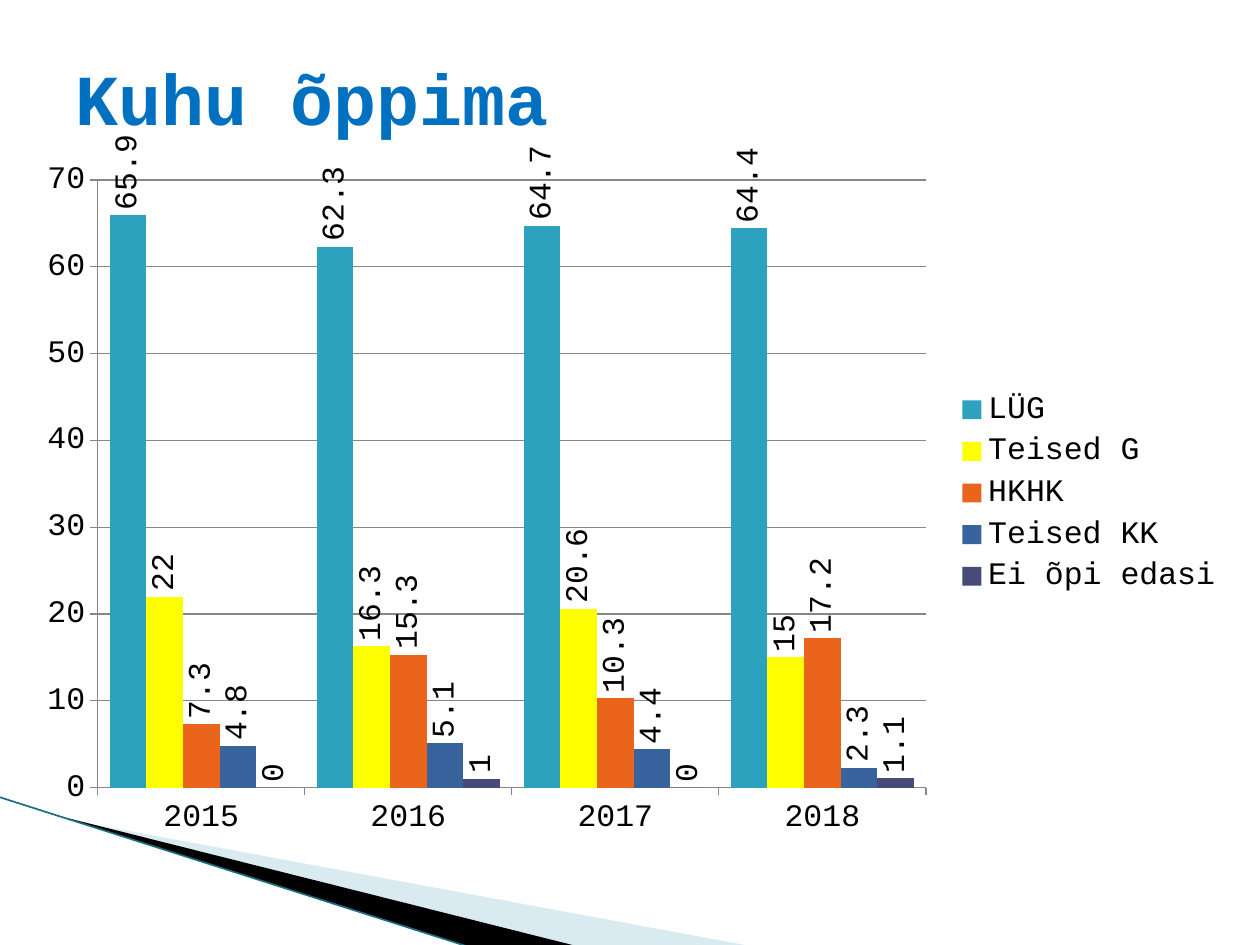
from lxml import etree
from pptx import Presentation
from pptx.chart.data import CategoryChartData
from pptx.dml.color import RGBColor
from pptx.enum.chart import XL_CHART_TYPE as ChartType, XL_LABEL_POSITION as LabelPosition
from pptx.enum.chart import XL_LEGEND_POSITION as LegendPosition, XL_TICK_MARK as TickMark
from pptx.enum.shapes import MSO_CONNECTOR as Connector
from pptx.enum.text import MSO_ANCHOR as Anchor
from pptx.oxml import parse_xml
from pptx.oxml.ns import nsdecls, qn
from pptx.util import Pt

PX = 914400 // 126
FONT = "Courier New"
BLACK = RGBColor(0x00, 0x00, 0x00)
TITLE_BLUE = RGBColor(0x00, 0x70, 0xC0)
PALE_BLUE = RGBColor(0xA0, 0xCB, 0xDC)
TEAL = RGBColor(0x16, 0x70, 0x80)
GRAY = RGBColor(0x87, 0x87, 0x87)

YEARS = ["2015", "2016", "2017", "2018"]
SERIES = [
    ("LÜG", (65.9, 62.3, 64.7, 64.4), RGBColor(0x2D, 0xA2, 0xBF)),
    ("Teised G", (22, 16.3, 20.6, 15), RGBColor(0xFF, 0xFF, 0x00)),
    ("HKHK", (7.3, 15.3, 10.3, 17.2), RGBColor(0xEB, 0x64, 0x1B)),
    ("Teised KK", (4.8, 5.1, 4.4, 2.3), RGBColor(0x39, 0x63, 0x9D)),
    ("Ei õpi edasi", (0, 1, 0, 1.1), RGBColor(0x47, 0x4B, 0x78)),
]

deck = Presentation()
deck.slide_width, deck.slide_height = 1260 * PX, 945 * PX
page = deck.slides.add_slide(deck.slide_layouts[6])

# Corner wedges
WEDGES = [
    ([(69, 820), (750, 946), (575, 946), (69, 819)], PALE_BLUE, 40),
    ([(67, 818), (576, 946), (469, 947), (68, 819)], BLACK, 100),
]
for points, color, opacity in WEDGES:
    builder = page.shapes.build_freeform(*points[0], scale=PX)
    builder.add_line_segments(points[1:], close=True)
    wedge = builder.convert_to_shape()
    wedge.shadow.inherit = False
    wedge.fill.solid()
    wedge.fill.fore_color.rgb = color
    wedge.line.fill.background()
    if opacity < 100:
        tint = wedge._element.spPr.find(".//" + qn("a:srgbClr"))
        etree.SubElement(tint, qn("a:alpha")).set("val", str(opacity * 1000))

# Corner line
edge = page.shapes.add_connector(Connector.STRAIGHT, -1 * PX, 797 * PX, 469 * PX, 947 * PX)
edge.line.color.rgb = TEAL
edge.line.width = Pt(0.95)
etree.SubElement(edge._element.spPr, qn("a:effectLst"))

# Column chart
data = CategoryChartData()
data.categories = YEARS
for name, values, color in SERIES:
    data.add_series(name, values)
chart = page.shapes.add_chart(
    ChartType.COLUMN_CLUSTERED, 25 * PX, 135 * PX, 1211 * PX, 714 * PX, data).chart
chart.has_title = False
chart.font.name = FONT
chart.font.size = Pt(18)
chart.font.color.rgb = BLACK
chart.has_legend = True
chart.legend.position = LegendPosition.RIGHT
chart.legend.include_in_layout = False

# Axes
for axis in (chart.category_axis, chart.value_axis):
    axis.major_tick_mark = TickMark.OUTSIDE
    axis.minor_tick_mark = TickMark.NONE
    axis.format.line.color.rgb = GRAY
scale = chart.value_axis
scale.minimum_scale, scale.maximum_scale, scale.major_unit = 0, 70, 10
scale.has_major_gridlines = True
scale.major_gridlines.format.line.color.rgb = GRAY

# Columns with upright value labels
plot = chart.plots[0]
plot.gap_width = 65
plot.overlap = 0
plot.vary_by_categories = False
for series, (name, values, color) in zip(plot.series, SERIES):
    series.format.fill.solid()
    series.format.fill.fore_color.rgb = color
    labels = series.data_labels
    labels.show_value = True
    labels.position = LabelPosition.OUTSIDE_END
    labels.font.name = FONT
    labels.font.size = Pt(18)
    labels.font.color.rgb = BLACK
    body = labels._element.find(".//" + qn("a:bodyPr"))
    body.set("rot", "-5400000")
    body.set("vert", "horz")

# Plot area placement, as shares of the chart
area = chart._chartSpace.chart.plotArea
for old in area.findall(qn("c:layout")):
    area.remove(old)
area.insert(0, parse_xml(
    f'<c:layout {nsdecls("c")}><c:manualLayout><c:layoutTarget val="inner"/>'
    '<c:xMode val="edge"/><c:yMode val="edge"/><c:x val="0.06"/><c:y val="0.06"/>'
    '<c:w val="0.684"/><c:h val="0.854"/></c:manualLayout></c:layout>'))

# Title
box = page.shapes.add_textbox(63 * PX, 38 * PX, 1134 * PX, 117 * PX)
box.text_frame.word_wrap = True
box.text_frame.vertical_anchor = Anchor.MIDDLE
box.text_frame.text = "Kuhu õppima"
span = box.text_frame.paragraphs[0].runs[0]
span.font.name = FONT
span.font.size = Pt(41)
span.font.bold = True
span.font.color.rgb = TITLE_BLUE

deck.save("out.pptx")
